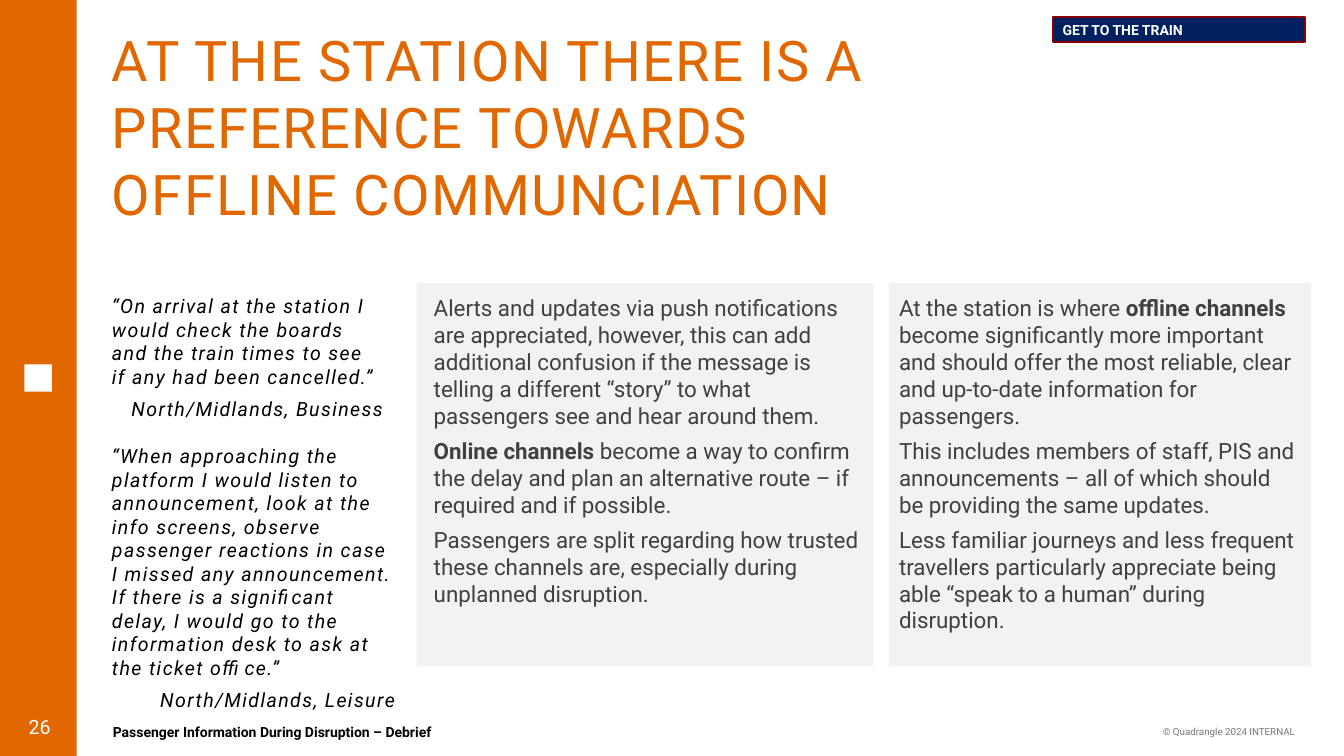
from dataclasses import dataclass

from pptx import Presentation
from pptx import util as u
from pptx.dml.color import RGBColor
from pptx.enum import shapes, text

Pt = u.Pt
LEFT, CENTER, RIGHT = text.PP_ALIGN.LEFT, text.PP_ALIGN.CENTER, text.PP_ALIGN.RIGHT
TOP, MIDDLE = text.MSO_ANCHOR.TOP, text.MSO_ANCHOR.MIDDLE


@dataclass(frozen=True)
class Theme:
    font: str = "Roboto"
    orange: str = "E16800"
    navy: str = "002060"
    dark_red: str = "880000"
    panel: str = "F2F2F2"
    body: str = "404040"
    grey: str = "797979"
    black: str = "000000"
    white: str = "FFFFFF"
    title_size: int = 40
    body_size: int = 16
    quote_size: int = 14
    label_size: int = 10
    small_size: int = 7
    para_gap: int = 6
    tracking: int = 100  # hundredths of a point


class SlideBuilder:
    def __init__(self, s, theme):
        self.s, self.theme = s, theme

    def rect(self, x, y, w, h, fill, line=None):
        sp = self.s.shapes.add_shape(
            shapes.MSO_SHAPE.RECTANGLE, Pt(x), Pt(y), Pt(w), Pt(h))
        sp.shadow.inherit = False
        sp.fill.solid()
        sp.fill.fore_color.rgb = RGBColor.from_string(fill)
        if line:
            sp.line.color.rgb = RGBColor.from_string(line)
            sp.line.width = Pt(1.5)
        else:
            sp.line.fill.background()
        return sp

    def set_text(self, sp, paragraphs, size, color, aligns=(LEFT,), anchor=TOP,
                 bold=False, italic=False, tracked=False):
        """Fill a shape with paragraphs; text between asterisks is bold."""
        tf = sp.text_frame
        tf.word_wrap = True
        tf.vertical_anchor = anchor
        for i, line in enumerate(paragraphs):
            p = tf.add_paragraph() if i else tf.paragraphs[0]
            p.alignment = aligns[min(i, len(aligns) - 1)]
            if i:
                p.space_before = Pt(self.theme.para_gap)
            for j, part in enumerate(line.split("*")):
                if not part:
                    continue
                r = p.add_run()
                r.text = part
                r.font.name = self.theme.font
                r.font.size = Pt(size)
                r.font.bold = bold or j % 2 == 1
                r.font.italic = italic
                r.font.color.rgb = RGBColor.from_string(color)
                if tracked:
                    r._r.get_or_add_rPr().set("spc", str(self.theme.tracking))

    def text(self, x, y, w, h, paragraphs, size, color, inset=False, **style):
        sp = self.s.shapes.add_textbox(Pt(x), Pt(y), Pt(w), Pt(h))
        tf = sp.text_frame
        if not inset:
            tf.margin_left = tf.margin_right = tf.margin_top = tf.margin_bottom = 0
        self.set_text(sp, paragraphs, size, color, **style)

    def tag(self, x, y, w, h, label):
        t = self.theme
        sp = self.rect(x, y, w, h, t.navy, t.dark_red)
        self.set_text(sp, [label], t.label_size, t.white, anchor=MIDDLE, bold=True)

    def quote(self, y, w, h, words, speaker):
        t = self.theme
        self.text(80, y, w, h, [words, speaker], t.quote_size, t.black,
                  aligns=(LEFT, RIGHT), italic=True, tracked=True)

    def panel(self, x, w, text_x, text_w, paragraphs):
        t = self.theme
        self.rect(x, 202.2, w, 273.6, t.panel)
        self.text(text_x, 210.2, text_w, 252, paragraphs, t.body_size, t.body)


def main():
    prs = Presentation()
    prs.slide_width, prs.slide_height = Pt(960), Pt(540)
    t = Theme()
    b = SlideBuilder(prs.slides.add_slide(prs.slide_layouts[6]), t)

    b.rect(0, 0, 54.7, 540, t.orange)
    b.rect(17.5, 260.2, 19.6, 19.6, t.white)
    b.text(80.6, 517, 292, 12, ["Passenger Information During Disruption – Debrief"],
           t.label_size, t.black, anchor=MIDDLE, bold=True)
    b.text(80, 18, 569.5, 145.4,
           ["AT THE STATION THERE IS A PREFERENCE TOWARDS OFFLINE COMMUNCIATION"],
           t.title_size, t.orange, tracked=True)
    b.tag(752, 12, 180, 18, "GET TO THE TRAIN")

    b.quote(210.2, 193.7, 90.7,
            "“On arrival at the station I would check the boards and the train "
            "times to see if any had been cancelled.”",
            "North/Midlands, Business")
    b.quote(317.2, 202.3, 193,
            "“When approaching the platform I would listen to announcement, look at "
            "the info screens, observe passenger reactions in case I missed any "
            "announcement. If there is a significant delay, I would go to the "
            "information desk to ask at the ticket office.”",
            "North/Midlands, Leisure")

    b.panel(635, 301.5, 642.2, 285.8, [
        "At the station is where *offline channels *become significantly more "
        "important and should offer the most reliable, clear and up-to-date "
        "information for passengers.",
        "This includes members of staff, PIS and announcements – all of which "
        "should be providing the same updates.",
        "Less familiar journeys and less frequent travellers particularly "
        "appreciate being able “speak to a human” during disruption.",
    ])
    b.panel(297.6, 326.2, 309.8, 310.3, [
        "Alerts and updates via push notifications are appreciated, however, this "
        "can add additional confusion if the message is telling a different "
        "“story” to what passengers see and hear around them.",
        "*Online channels *become a way to confirm the delay and plan an "
        "alternative route – if required and if possible.",
        "Passengers are split regarding how trusted these channels are, "
        "especially during unplanned disruption.",
    ])

    b.text(608, 514.4, 324, 16, ["© Quadrangle 2024 INTERNAL"], t.small_size, t.grey,
           inset=True, aligns=(RIGHT,), anchor=MIDDLE)
    b.text(0, 505, 56.7, 28, ["26"], t.quote_size, t.white,
           inset=True, aligns=(CENTER,), anchor=MIDDLE)
    prs.save("out.pptx")


if __name__ == "__main__":
    main()
